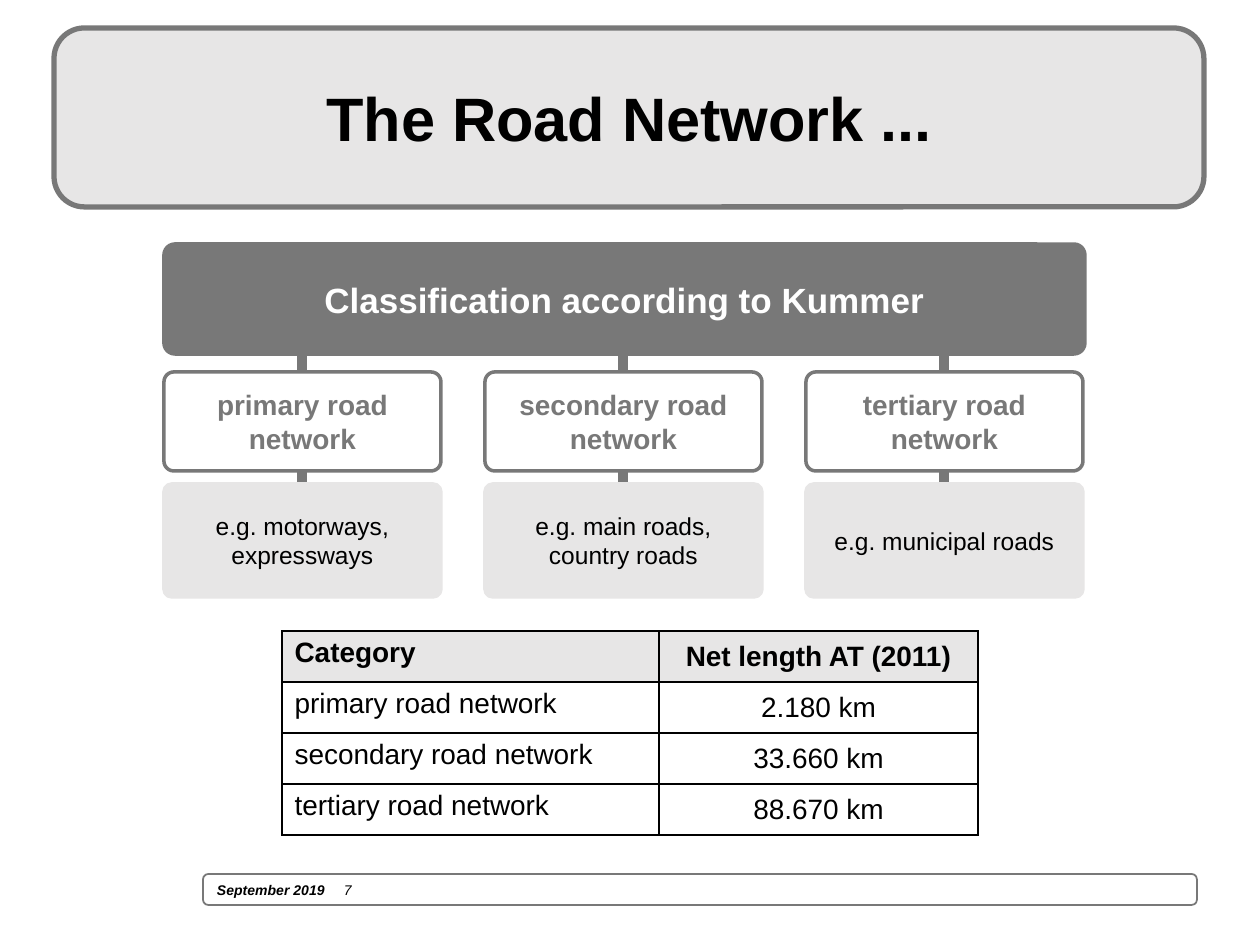
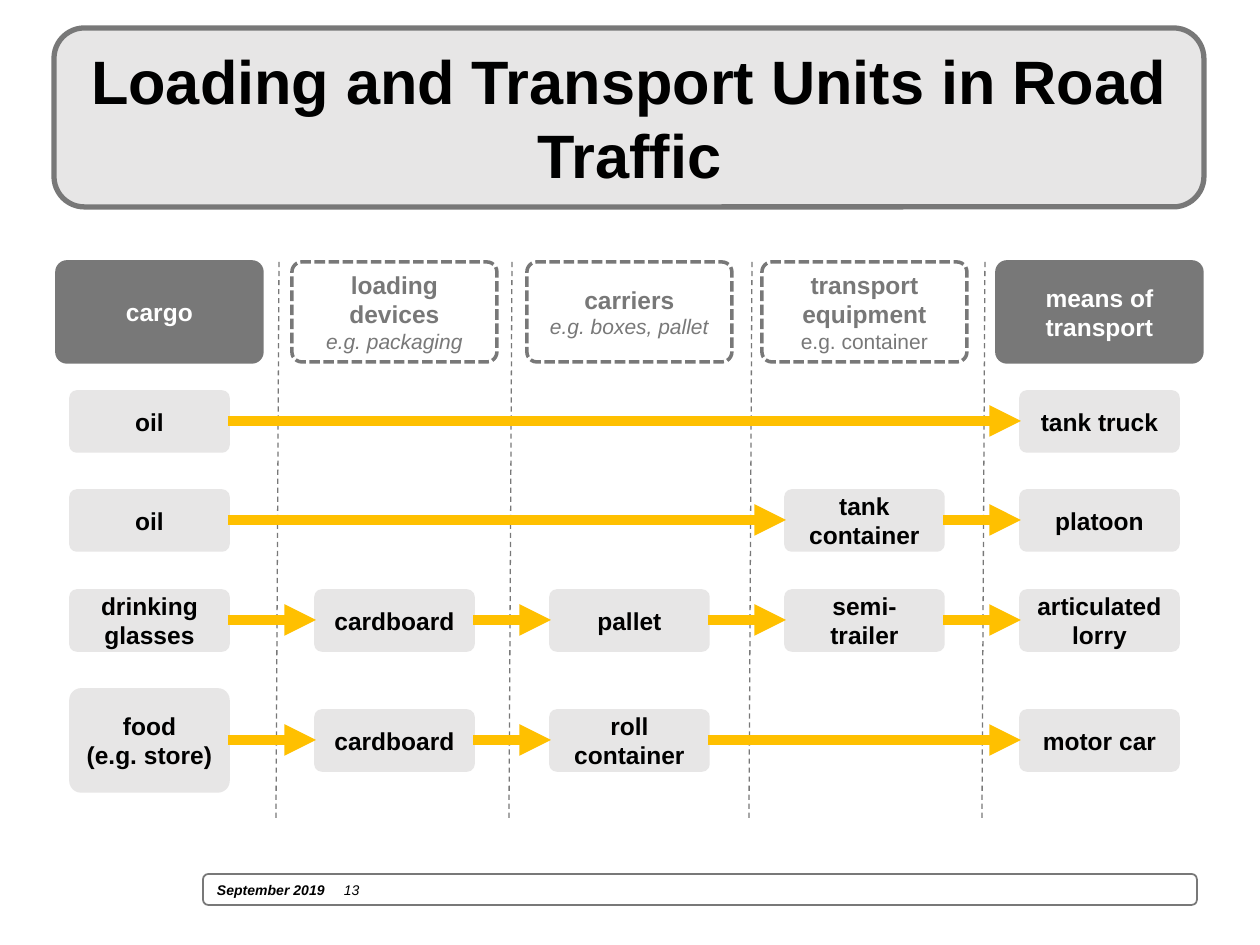
from lxml import etree
from pptx import Presentation
from pptx.dml.color import RGBColor
from pptx.enum.dml import MSO_LINE
from pptx.enum.shapes import MSO_CONNECTOR, MSO_SHAPE
from pptx.enum.text import MSO_ANCHOR, MSO_AUTO_SIZE, PP_ALIGN
from pptx.oxml.ns import qn
from pptx.util import Pt

ROUNDED = MSO_SHAPE.ROUNDED_RECTANGLE
STRAIGHT = MSO_CONNECTOR.STRAIGHT
CENTER, LEFT = PP_ALIGN.CENTER, PP_ALIGN.LEFT
TOP, MIDDLE = MSO_ANCHOR.TOP, MSO_ANCHOR.MIDDLE
NO_AUTOFIT = MSO_AUTO_SIZE.NONE
DASH, SHORT_DASH = MSO_LINE.DASH, MSO_LINE.SQUARE_DOT

PX = 7257  # EMU per px, 126 px to the inch
FONT = "Arial"
DARK, LIGHT, WHITE, BLACK, AMBER = "787878", "E7E6E6", "FFFFFF", "000000", "FFC000"
color = RGBColor.from_string


def add_box(slide, text, left, top, width, height, fill=LIGHT, outline=LIGHT,
            text_color=BLACK, size=14, bold=True, corner=0.1, weight=2):
    """Add a rounded box with centred text."""
    box = slide.shapes.add_shape(ROUNDED, left * PX, top * PX, width * PX, height * PX)
    box.shadow.inherit = False
    box.adjustments[0] = corner
    box.fill.solid()
    box.fill.fore_color.rgb = color(fill)
    box.line.color.rgb = color(outline)
    box.line.width = Pt(weight)
    box.text_frame.text = text
    box.text_frame.word_wrap = True
    box.text_frame.vertical_anchor = MIDDLE
    for paragraph in box.text_frame.paragraphs:
        paragraph.alignment = CENTER
        for run in paragraph.runs:
            run.font.name = FONT
            run.font.size = Pt(size)
            run.font.bold = bold
            run.font.color.rgb = color(text_color)
    return box


def add_line(slide, x1, y1, x2, y2, line_color=DARK, weight=6, dash=None, arrow=False):
    connector = slide.shapes.add_connector(STRAIGHT, x1 * PX, y1 * PX, x2 * PX, y2 * PX)
    connector.line.color.rgb = color(line_color)
    connector.line.width = Pt(weight)
    if dash:
        connector.line.dash_style = dash
    properties = connector.element.spPr
    if arrow:
        etree.SubElement(properties.find(qn("a:ln")), qn("a:tailEnd"), type="triangle")
    etree.SubElement(properties, qn("a:effectLst"))


presentation = Presentation()
presentation.slide_width = 1260 * PX
presentation.slide_height = 945 * PX

# Title band and footer of every slide
slides = []
for title_text, number in [("The Road Network ...", 7),
                           ("Loading and Transport Units in Road Traffic", 13)]:
    slide = presentation.slides.add_slide(presentation.slide_layouts[5])
    slides.append(slide)

    footer = add_box(slide, f"September 2019\t{number}", 203, 874, 994, 31,
                     fill=WHITE, outline=DARK, size=8, corner=0.17, weight=1)
    paragraph = footer.text_frame.paragraphs[0]
    paragraph.alignment = LEFT
    tabs = etree.SubElement(paragraph._p.get_or_add_pPr(), qn("a:tabLst"))
    etree.SubElement(tabs, qn("a:tab"), pos=str(127 * PX), algn="l")
    date_run = paragraph.runs[0]
    date_run.text = "September 2019\t"
    date_run.font.italic = True
    number_run = paragraph.add_run()
    number_run.text = str(number)
    number_run.font.name = FONT
    number_run.font.size = Pt(8)
    number_run.font.bold = False
    number_run.font.italic = True
    number_run.font.color.rgb = color(BLACK)

    add_box(slide, "", 54, 28, 1150, 179, outline=DARK, corner=0.17, weight=3)

    title = slide.shapes.title
    slide.shapes.element.append(title.element)  # in front of the band
    title.left, title.top, title.width, title.height = 74 * PX, 38 * PX, 1111 * PX, 158 * PX
    title.text_frame.text = title_text
    title.text_frame.word_wrap = True
    title.text_frame.auto_size = NO_AUTOFIT
    title.text_frame.vertical_anchor = MIDDLE
    paragraph = title.text_frame.paragraphs[0]
    paragraph.alignment = CENTER
    font = paragraph.runs[0].font
    font.name, font.size, font.bold = FONT, Pt(35), True
    font.color.rgb = color(BLACK)

network_slide, units_slide = slides

# Road network: classification tree
classes = [("primary road network", "e.g. motorways, expressways"),
           ("secondary road network", "e.g. main roads, country roads"),
           ("tertiary road network", "e.g. municipal roads")]
for column in range(len(classes)):
    x = 302 + 321 * column
    add_line(network_slide, x, 354, x, 596)
add_box(network_slide, "Classification according to Kummer", 164, 244, 921, 110,
        fill=DARK, outline=DARK, text_color=WHITE, size=20)
for column, (name, example) in enumerate(classes):
    left = 164 + 321 * column
    add_box(network_slide, name, left, 372, 277, 99,
            fill=WHITE, outline=DARK, text_color=DARK, size=16)
    add_box(network_slide, example, left, 484, 277, 113, bold=False, corner=0.07)

# Road network: lengths
lengths = [("Category", "Net length AT (2011)"),
           ("primary road network", "2.180 km"),
           ("secondary road network", "33.660 km"),
           ("tertiary road network", "88.670 km")]
table = network_slide.shapes.add_table(4, 2, 282 * PX, 631 * PX, 696 * PX, 204 * PX).table
table.first_row = False
table.horz_banding = False
table.columns[0].width = 377 * PX
table.columns[1].width = 319 * PX
for row, texts in enumerate(lengths):
    for column, text in enumerate(texts):
        cell = table.cell(row, column)
        cell.text = text
        cell.vertical_anchor = MIDDLE if column else TOP
        if row == 0:
            cell.fill.solid()
            cell.fill.fore_color.rgb = color(LIGHT)
        else:
            cell.fill.background()
        paragraph = cell.text_frame.paragraphs[0]
        paragraph.alignment = CENTER if column else LEFT
        font = paragraph.runs[0].font
        font.name, font.size, font.bold = FONT, Pt(16), row == 0
        font.color.rgb = color(BLACK)
        cell_properties = cell._tc.get_or_add_tcPr()
        for position, side in enumerate(["a:lnL", "a:lnR", "a:lnT", "a:lnB"]):
            border = etree.Element(qn(side), w=str(Pt(1)))
            border_fill = etree.SubElement(border, qn("a:solidFill"))
            etree.SubElement(border_fill, qn("a:srgbClr"), val=BLACK)
            cell_properties.insert(position, border)

# Transport units: column separators and headers
for x in [279, 512, 752, 985]:
    add_line(units_slide, x, 262, x - 3, 820, weight=0.75, dash=DASH)

headers = ["cargo", "loading devices\ne.g. packaging", "carriers\ne.g. boxes, pallet",
           "transport equipment\ne.g. container", "means of transport"]
for column, text in enumerate(headers):
    optional = "\n" in text
    header = add_box(units_slide, text, 57 + 235 * column, 262, 205, 100,
                     fill=WHITE if optional else DARK, outline=DARK,
                     text_color=DARK if optional else WHITE)
    if optional:
        header.line.dash_style = SHORT_DASH
        example_font = header.text_frame.paragraphs[1].runs[0].font
        example_font.size = Pt(12)
        example_font.bold = False
        example_font.italic = "container" not in text

# Transport units: one chain per row, with the column of each unit
chains = [
    (421, {0: "oil", 4: "tank truck"}),
    (520, {0: "oil", 3: "tank container", 4: "platoon"}),
    (620, {0: "drinking glasses", 1: "cardboard", 2: "pallet",
           3: "semi-trailer", 4: "articulated lorry"}),
    (740, {0: "food\v(e.g. store)", 1: "cardboard", 2: "roll container", 4: "motor car"}),
]
for middle, units in chains:
    previous_right = None
    for column, text in units.items():
        left = 81 + 235 * column if column else 71
        height = 101 if "\v" in text else 59
        add_box(units_slide, text, left, middle - height // 2, 157, height)
        if previous_right:
            add_line(units_slide, previous_right, middle, left, middle, AMBER, arrow=True)
        previous_right = left + 157

presentation.save("out.pptx")
